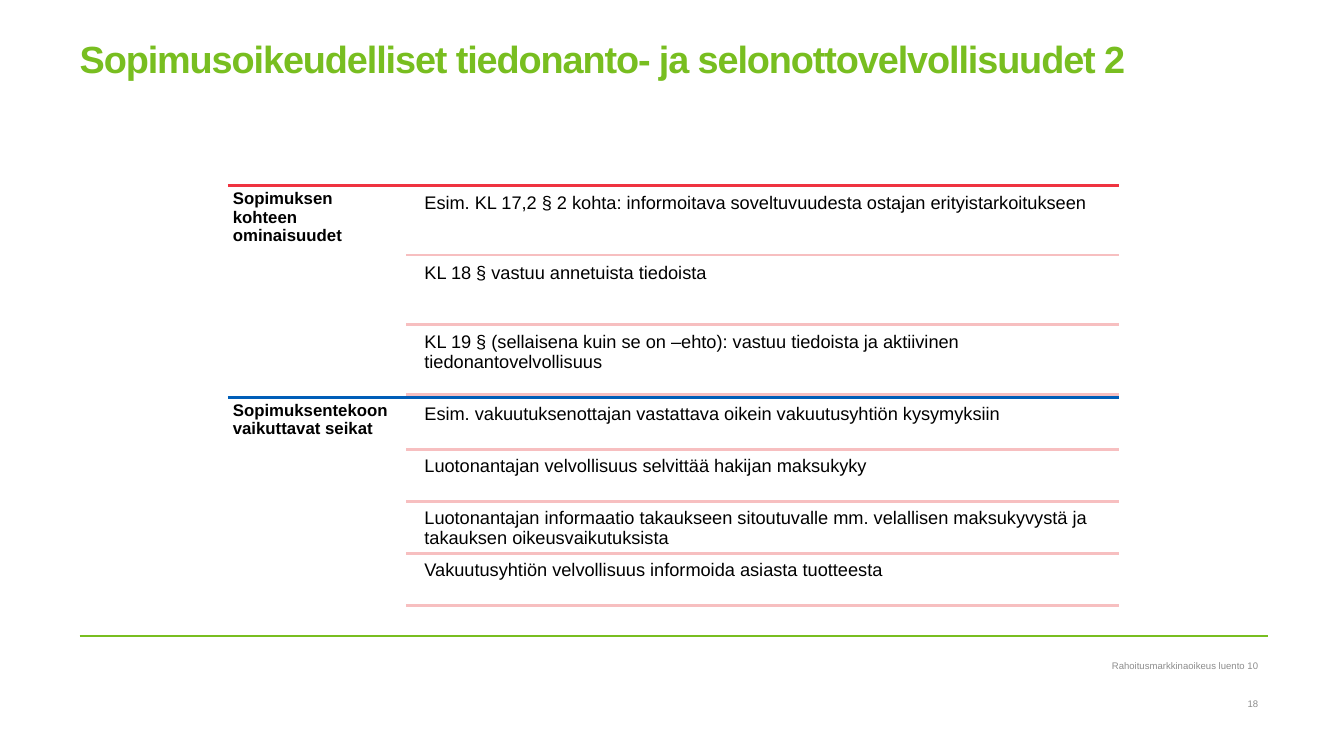
from pptx import Presentation
from pptx import util as u
from pptx.dml.color import RGBColor
from pptx.enum import shapes, text
from pptx.oxml.ns import qn
from lxml import etree

PX = 9144  # EMU per px, 100 px to the inch
GREEN = RGBColor(0x78, 0xBE, 0x20)
RED = RGBColor(0xEF, 0x33, 0x40)
BLUE = RGBColor(0x00, 0x5E, 0xB8)
PINK = RGBColor(0xF7, 0xBF, 0xC0)
GREY = RGBColor(0x8C, 0x8C, 0x8C)
BLACK = RGBColor(0, 0, 0)

PARTS = [
    (RED, "Sopimuksen kohteen ominaisuudet", [
        "Esim. KL 17,2 § 2 kohta: informoitava soveltuvuudesta ostajan erityistarkoitukseen",
        "KL 18 § vastuu annetuista tiedoista",
        "KL 19 § (sellaisena kuin se on –ehto): vastuu tiedoista ja aktiivinen "
        "tiedonantovelvollisuus",
    ]),
    (BLUE, "Sopimuksentekoon vaikuttavat seikat", [
        "Esim. vakuutuksenottajan vastattava oikein vakuutusyhtiön kysymyksiin",
        "Luotonantajan velvollisuus selvittää hakijan maksukyky",
        "Luotonantajan informaatio takaukseen sitoutuvalle mm. velallisen maksukyvystä ja "
        "takauksen oikeusvaikutuksista",
        "Vakuutusyhtiön velvollisuus informoida asiasta tuotteesta",
    ]),
]


def emu(*vals):
    return [round(v * PX) for v in vals]


def rule(slide, left, top, width, color, weight):
    line = slide.shapes.add_connector(
        shapes.MSO_CONNECTOR.STRAIGHT, *emu(left, top, left + width, top))
    line.line.color.rgb = color
    line.line.width = u.Pt(weight)
    etree.SubElement(line._element.spPr, qn("a:effectLst"))


def write(shape, words, size, color, pads, bold=False, space=1.0,
          align=text.PP_ALIGN.LEFT, anchor=text.MSO_ANCHOR.TOP):
    """Fill a shape with one paragraph; pads are left, top, right, bottom."""
    frame = shape.text_frame
    frame.text = words
    frame.word_wrap = True
    frame.auto_size = text.MSO_AUTO_SIZE.NONE
    frame.vertical_anchor = anchor
    (frame.margin_left, frame.margin_top,
     frame.margin_right, frame.margin_bottom) = emu(*pads)
    para = frame.paragraphs[0]
    para.alignment = align
    para.line_spacing = space
    run = para.runs[0]
    run.font.name = "Arial"
    run.font.size = u.Pt(size)
    run.font.bold = bold
    run.font.color.rgb = color
    return run


def label(slide, box, words, size, color, pads, **style):
    write(slide.shapes.add_textbox(*emu(*box)), words, size, color, pads, **style)


def heading(slide, box, words):
    title = slide.shapes.title
    title.left, title.top, title.width, title.height = emu(*box)
    run = write(title, words, 27, GREEN, (0, 0, 0, 0), bold=True, space=0.85)
    run._r.get_or_add_rPr().set("spc", "-80")


def part(slide, box, color, name, rows):
    """A topic on the left, its ruled rows on the right."""
    left, top, width, height = box
    side, inset, pads = 177, 13, (5, 5, 5, 5)
    pitch = (height - 3) / len(rows)
    gap = pitch / 21
    rule(slide, left, top, width, color, 2)
    label(slide, (left, top, side, height), name, 12, BLACK, pads, bold=True, space=0.9)
    for i, row in enumerate(rows):
        y = top + i * pitch
        label(slide, (left + side + inset, y + gap, width - side - inset, pitch - gap),
              row, 13, BLACK, pads, space=0.9)
        rule(slide, left + side, y + pitch, width - side, PINK, 2)


def footer(slide, box):
    left, top, width, height = box
    rule(slide, left, top, width, GREEN, 1)
    for words, drop in (("Rahoitusmarkkinaoikeus luento 10", 20), ("18", 58)):
        label(slide, (720, top + drop, 528, 18), words, 6.8, GREY, (10, 5, 0, 5),
              align=text.PP_ALIGN.RIGHT, anchor=text.MSO_ANCHOR.MIDDLE)


def main():
    deck = Presentation()
    deck.slide_width, deck.slide_height = emu(1333, 750)
    slide = deck.slides.add_slide(deck.slide_layouts[5])
    heading(slide, (79, 42, 1179, 131),
            "Sopimusoikeudelliset tiedonanto- ja selonottovelvollisuudet 2")
    for i, (color, name, rows) in enumerate(PARTS):
        part(slide, (226, 184 + 210 * i, 884, 210), color, name, rows)
    footer(slide, (79, 631, 1179, 80))
    deck.save("out.pptx")


if __name__ == "__main__":
    main()
